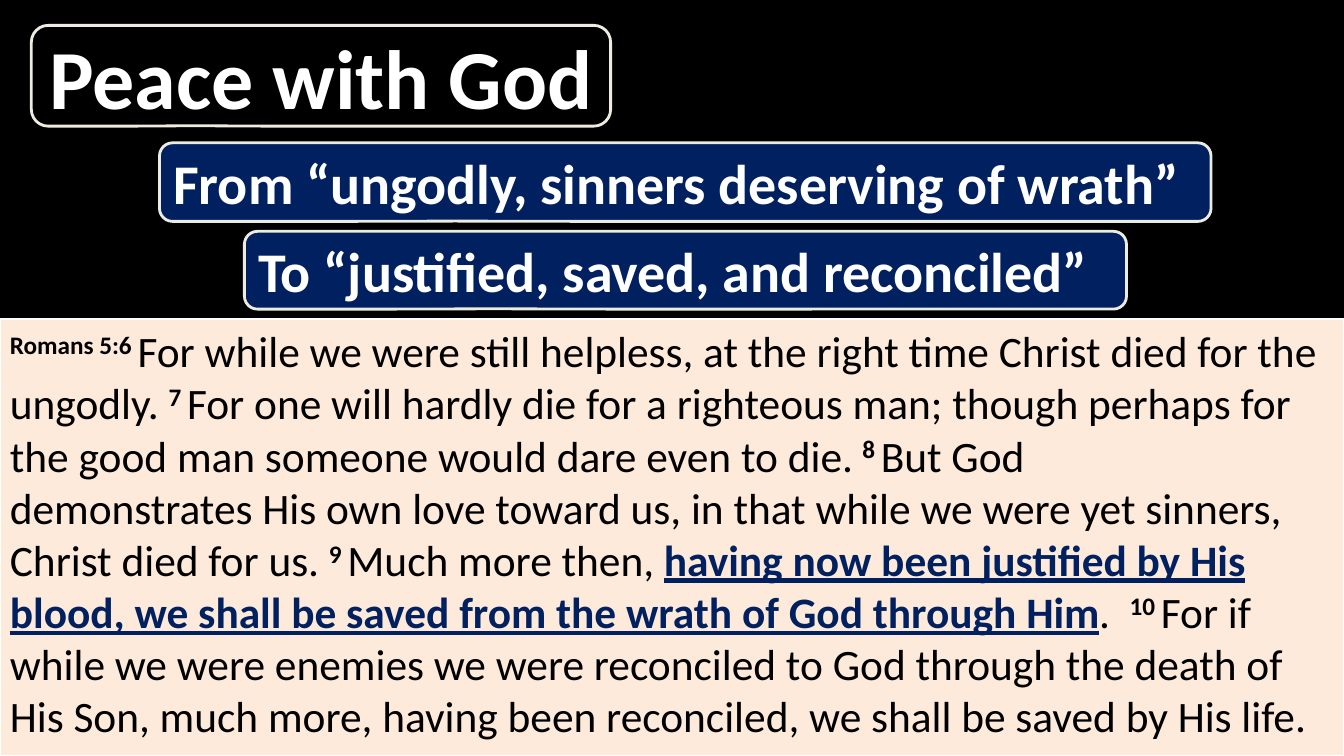
"""Build the "Peace with God" slide: three callouts above a Bible passage."""
from dataclasses import dataclass

from lxml.etree import SubElement
from pptx import Presentation
from pptx.dml.color import RGBColor
from pptx.enum.shapes import MSO_SHAPE
from pptx.enum.text import MSO_ANCHOR, PP_ALIGN
from pptx.oxml.ns import qn
from pptx.shapes.autoshape import Shape
from pptx.slide import Slide
from pptx.text.text import _Paragraph
from pptx.util import Cm, Pt


@dataclass(frozen=True)
class Theme:
    font: str = "Calibri"
    black: str = "000000"
    white: str = "FFFFFF"
    navy: str = "002060"
    cream: str = "FDEADA"
    ivory: str = "EEECE1"
    title_size: float = 60
    callout_size: float = 40
    passage_size: float = 31


@dataclass(frozen=True)
class Callout:
    text: str
    left: float
    top: float
    width: float
    height: float
    fill: str
    size: float
    align: PP_ALIGN = PP_ALIGN.LEFT
    opacity: int = 100


@dataclass(frozen=True)
class Verse:
    text: str
    number: bool = False
    stressed: bool = False


THEME = Theme()
SLIDE_WIDTH, SLIDE_HEIGHT = 33.87, 19.05
PASSAGE_TOP = 8.05
CALLOUT_SHAPE = (-0.219, 0.496, 0.167)
TIE, FIXED_SPACE = "~", chr(160)

CALLOUTS = (
    Callout("Peace with God", 0.79, 0.64, 14.6, 2.54, THEME.black,
            THEME.title_size, PP_ALIGN.CENTER, 64),
    Callout("From “ungodly, sinners deserving of wrath”", 4.02, 3.6, 26.5, 1.98,
            THEME.navy, THEME.callout_size),
    Callout("To “justified, saved, and reconciled”", 6.16, 5.83, 22.23, 1.96,
            THEME.navy, THEME.callout_size),
)

PASSAGE = (
    Verse("Romans 5:6~", number=True),
    Verse("For while we were still~helpless,~at the right time~Christ died for the ungodly.~"),
    Verse("7~", number=True),
    Verse("For one will hardly die for a righteous man; though perhaps for the good man "
          "someone would dare even to die.~"),
    Verse("8~", number=True),
    Verse("But God demonstrates~His own love toward us, in that while we were yet sinners, "
          "Christ died for us.~"),
    Verse("9~", number=True),
    Verse("Much more then, "),
    Verse("having now been justified by His blood, we shall be saved~from the wrath"
          "~of God~through Him", stressed=True),
    Verse(".  "),
    Verse("10~", number=True),
    Verse("For if while we were~enemies we were reconciled to God through the death of "
          "His Son, much more, having been reconciled, we shall be saved by His life.~"),
)


def add_span(para: _Paragraph, text: str, *, size: float, color: str, bold: bool = False,
             underline: bool = False, raised: bool = False) -> None:
    """Append formatted text to a paragraph, turning ties into fixed spaces."""
    span = para.add_run()
    span.text = text.replace(TIE, FIXED_SPACE)
    span.font.name = THEME.font
    span.font.size = Pt(size)
    span.font.color.rgb = RGBColor.from_string(color)
    span.font.bold = bold
    span.font.underline = underline
    if raised:
        span.font._element.set("baseline", "30000")


def add_box(page: Slide, kind: MSO_SHAPE, left: float, top: float, width: float,
            height: float, *, fill: str, line: str, weight: float) -> Shape:
    """Add a filled, outlined shape without a shadow."""
    box = page.shapes.add_shape(kind, Cm(left), Cm(top), Cm(width), Cm(height))
    box.shadow.inherit = False
    box.fill.solid()
    box.fill.fore_color.rgb = RGBColor.from_string(fill)
    box.line.color.rgb = RGBColor.from_string(line)
    box.line.width = Pt(weight)
    box.text_frame.word_wrap = True
    return box


def add_passage(page: Slide) -> None:
    """Add the verses on their cream panel."""
    box = add_box(page, MSO_SHAPE.RECTANGLE, 0, PASSAGE_TOP, SLIDE_WIDTH,
                  SLIDE_HEIGHT - PASSAGE_TOP, fill=THEME.cream, line=THEME.white, weight=1.5)
    box.text_frame.vertical_anchor = MSO_ANCHOR.TOP
    para = box.text_frame.paragraphs[0]
    para.alignment = PP_ALIGN.LEFT
    for verse in PASSAGE:
        add_span(para, verse.text, size=THEME.passage_size,
                 color=THEME.navy if verse.stressed else THEME.black,
                 bold=verse.number or verse.stressed,
                 underline=verse.stressed, raised=verse.number)


def add_callout(page: Slide, callout: Callout) -> None:
    """Add one rounded callout with its heading."""
    box = add_box(page, MSO_SHAPE.ROUNDED_RECTANGULAR_CALLOUT, callout.left, callout.top,
                  callout.width, callout.height, fill=callout.fill, line=THEME.ivory, weight=2)
    for index, value in enumerate(CALLOUT_SHAPE):
        box.adjustments[index] = value
    if callout.opacity < 100:
        color = box._element.spPr.find(qn("a:solidFill"))[0]
        SubElement(color, qn("a:alpha")).set("val", str(callout.opacity * 1000))
    box.text_frame.vertical_anchor = MSO_ANCHOR.MIDDLE
    para = box.text_frame.paragraphs[0]
    para.alignment = callout.align
    add_span(para, callout.text, size=callout.size, color=THEME.white, bold=True)


def main() -> None:
    """Build and save the deck."""
    deck = Presentation()
    deck.slide_width, deck.slide_height = Cm(SLIDE_WIDTH), Cm(SLIDE_HEIGHT)
    page = deck.slides.add_slide(deck.slide_layouts[6])
    page.background.fill.solid()
    page.background.fill.fore_color.rgb = RGBColor.from_string(THEME.black)
    add_passage(page)
    for callout in CALLOUTS:
        add_callout(page, callout)
    deck.save("out.pptx")


if __name__ == "__main__":
    main()
